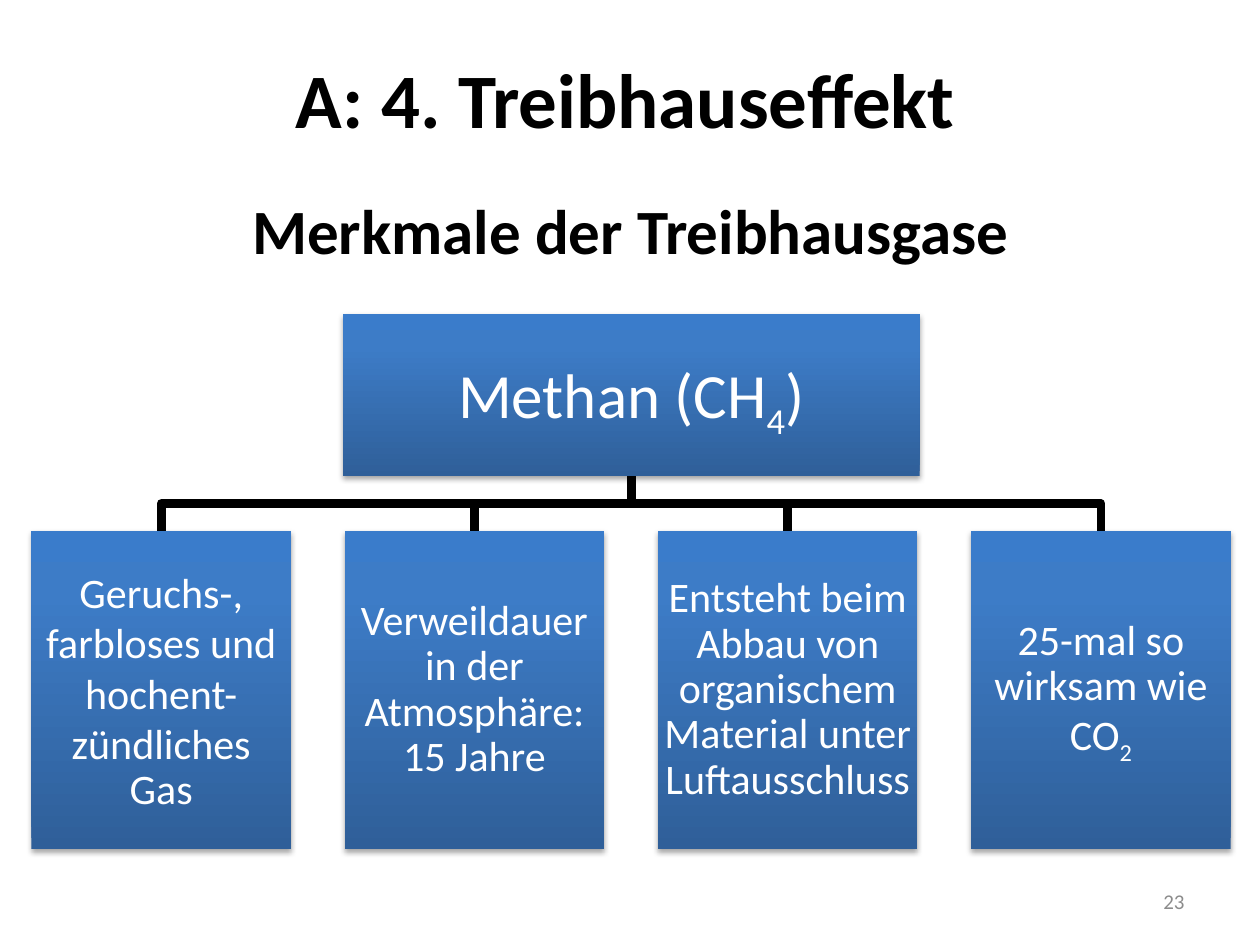
import copy

import pptx
import pptx.dml.color
import pptx.enum.shapes
import pptx.enum.text
import pptx.oxml
import pptx.oxml.ns
import pptx.util

Pt = pptx.util.Pt
RGBColor = pptx.dml.color.RGBColor
ALIGN = pptx.enum.text.PP_ALIGN
ANCHOR = pptx.enum.text.MSO_ANCHOR

BLACK = RGBColor(0x00, 0x00, 0x00)
WHITE = RGBColor(0xFF, 0xFF, 0xFF)
GREY = RGBColor(0x8C, 0x8C, 0x8C)
GRADIENT = [
    (0, RGBColor(0x2F, 0x5F, 0x99)),
    (0.8, RGBColor(0x3D, 0x7C, 0xC7)),
    (1, RGBColor(0x3A, 0x7C, 0xCB)),
]
FONT = "Calibri"

# Layout of the tree, in points
ROOT_TOP, ROOT_WIDTH, ROOT_HEIGHT = 179.3, 329.8, 92.9
LEAF_LEFT, LEAF_TOP, LEAF_WIDTH, LEAF_HEIGHT = 18, 303.2, 148.3, 182.2
LEAF_STEP = 179
BUS_TOP = 287.7

# Each leaf is a list of paragraphs: text, subscript, line spacing
LEAVES = [
    [("Geruchs-, farbloses und hochent-zündliches", "", 1), ("Gas", "", 0.9)],
    [("Verweildauer in der Atmosphäre: 15 Jahre", "", 0.9)],
    [("Entsteht beim Abbau von organischem Material unter Luftausschluss", "", 0.9)],
    [("25-mal so wirksam wie CO", "2", 0.9)],
]


def format_span(span, size, color, bold=False):
    span.font.name = FONT
    span.font.size = Pt(size)
    span.font.bold = bold
    span.font.color.rgb = color


def add_text(page, left, top, width, height, text, size, color, align, bold=False):
    box = page.shapes.add_textbox(Pt(left), Pt(top), Pt(width), Pt(height))
    frame = box.text_frame
    frame.word_wrap = True
    frame.text = text
    para = frame.paragraphs[0]
    para.alignment = align
    format_span(para.runs[0], size, color, bold)
    return box


def fill_gradient(box):
    box.fill.gradient()
    box.fill.gradient_angle = 90
    first = box.fill._fill.gradient_stops[0]._gs
    first.addnext(copy.deepcopy(first))
    for stop, (position, color) in zip(box.fill.gradient_stops, GRADIENT):
        stop.position = position
        stop.color.rgb = color


def add_shadow(box):
    box.shadow.inherit = False
    effects = box._element.spPr.find(pptx.oxml.ns.qn("a:effectLst"))
    effects.append(pptx.oxml.parse_xml(
        f'<a:outerShdw {pptx.oxml.ns.nsdecls("a")} blurRad="{Pt(3.1)}" '
        f'dist="{Pt(1.8)}" dir="5400000" rotWithShape="0">'
        '<a:srgbClr val="000000"><a:alpha val="35000"/></a:srgbClr></a:outerShdw>'
    ))


def add_node(page, left, top, width, height, size, inset, paragraphs):
    box = page.shapes.add_shape(
        pptx.enum.shapes.MSO_SHAPE.RECTANGLE, Pt(left), Pt(top), Pt(width), Pt(height))
    fill_gradient(box)
    box.line.fill.background()
    add_shadow(box)

    frame = box.text_frame
    frame.word_wrap = True
    frame.vertical_anchor = ANCHOR.MIDDLE
    frame.margin_left = frame.margin_right = Pt(inset)
    frame.margin_top = frame.margin_bottom = Pt(inset)
    frame.text = "\n".join(text for text, *_ in paragraphs)
    for para, (_, subscript, spacing) in zip(frame.paragraphs, paragraphs):
        para.alignment = ALIGN.CENTER
        para.line_spacing = spacing
        if subscript:
            add_subscript(para, subscript)
        for span in para.runs:
            format_span(span, size, WHITE)


def add_subscript(para, subscript):
    """Append the lowered digit, with a closing bracket if one is open."""
    span = para.add_run()
    span.text = subscript
    span.font._element.set("baseline", "-25000")
    if "(" in para.text:
        para.add_run().text = ")"


def add_branch(page, start_x, end_x):
    builder = page.shapes.build_freeform(Pt(start_x), Pt(ROOT_TOP + ROOT_HEIGHT))
    corners = [(start_x, BUS_TOP), (end_x, BUS_TOP), (end_x, LEAF_TOP)]
    builder.add_line_segments([(Pt(x), Pt(y)) for x, y in corners], close=False)
    branch = builder.convert_to_shape()
    branch.fill.background()
    branch.line.color.rgb = BLACK
    branch.line.width = Pt(5)
    branch.shadow.inherit = False


def main():
    deck = pptx.Presentation()
    deck.slide_width, deck.slide_height = Pt(720), Pt(540)
    page = deck.slides.add_slide(deck.slide_layouts[6])

    # Headings
    add_text(page, 14.4, 26, 686, 60.5, "A: 4. Treibhauseffekt",
             44, BLACK, ALIGN.CENTER, bold=True)
    add_text(page, 17.3, 105.8, 686, 51, "Merkmale der Treibhausgase",
             36, BLACK, ALIGN.CENTER, bold=True)

    # Branches, behind the boxes
    lefts = [LEAF_LEFT + index * LEAF_STEP for index in range(len(LEAVES))]
    centres = [left + LEAF_WIDTH / 2 for left in lefts]
    middle = (centres[0] + centres[-1]) / 2
    for centre in centres:
        add_branch(page, middle, centre)

    # Root and leaves
    add_node(page, middle - ROOT_WIDTH / 2, ROOT_TOP, ROOT_WIDTH, ROOT_HEIGHT,
             36, 2, [("Methan (CH", "4", 0.9)])
    for left, paragraphs in zip(lefts, LEAVES):
        add_node(page, left, LEAF_TOP, LEAF_WIDTH, LEAF_HEIGHT, 24, 1.2, paragraphs)

    # Page number
    number = add_text(page, 516, 500.5, 168, 28.8, "23", 12, GREY, ALIGN.RIGHT)
    number.text_frame.vertical_anchor = ANCHOR.MIDDLE

    deck.save("out.pptx")


if __name__ == "__main__":
    main()
